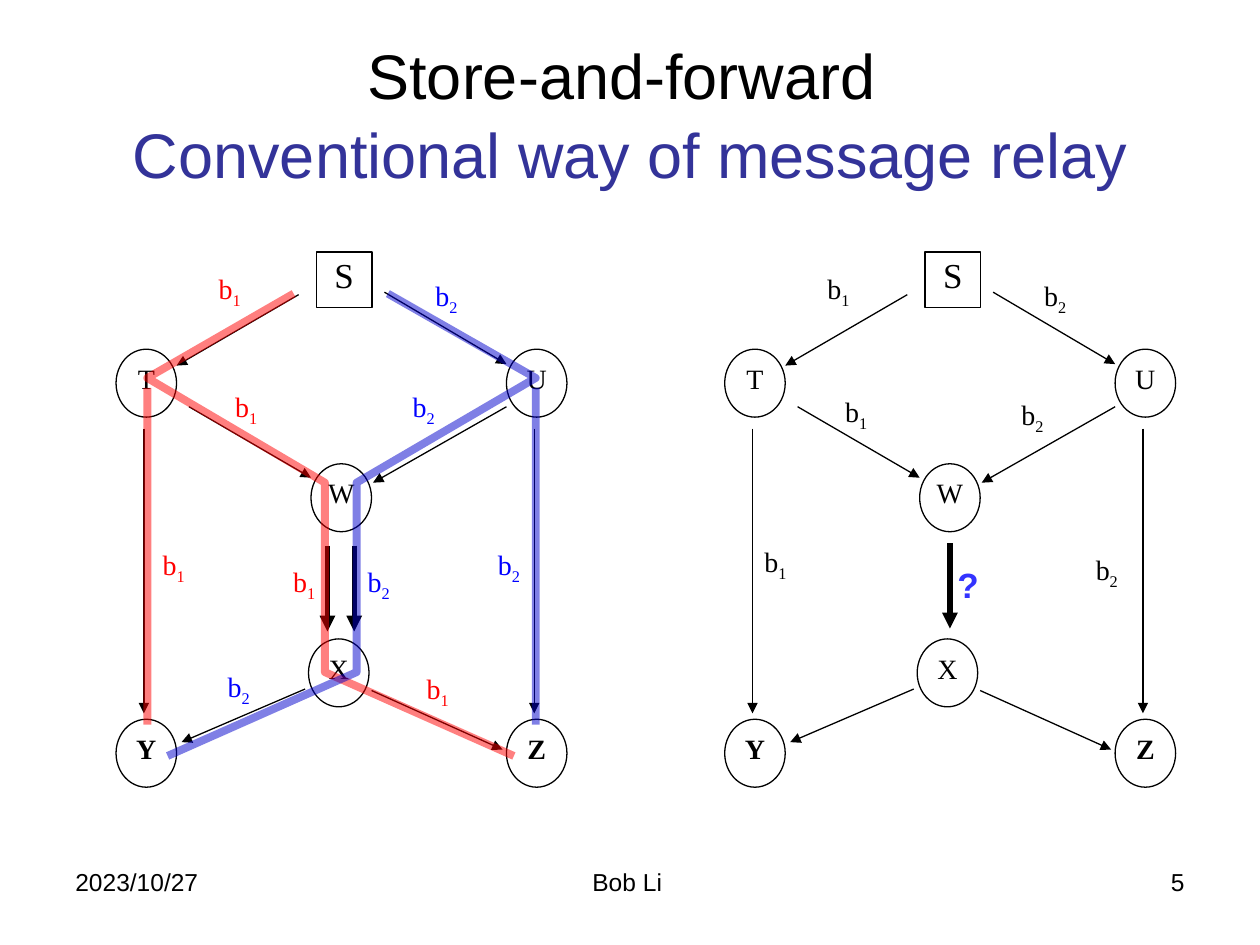
from lxml.etree import SubElement
from pptx import Presentation
from pptx.dml.color import RGBColor
from pptx.enum.shapes import MSO_CONNECTOR, MSO_SHAPE
from pptx.enum.text import MSO_ANCHOR as Anchor, PP_ALIGN as Align
from pptx.oxml.ns import qn
from pptx.util import Cm, Pt

COLORS = {
    "black": "000000", "navy": "333399", "red": "FF0000", "blue": "0000FF",
    "route_blue": "0000CC", "question": "3333FF",
}
SERIF = "Times New Roman"
DIAGRAM_LEFTS = [0, 12.27]

presentation = Presentation()
presentation.slide_width = Cm(25.4)
presentation.slide_height = Cm(19.05)
slide = presentation.slides.add_slide(presentation.slide_layouts[6])


def write(shape, text, size, color="black", font="Arial", align=Align.LEFT,
          anchor=Anchor.TOP, insets=(0.03, 0.03, 0.03, 0.03), bold=False):
    frame = shape.text_frame
    frame.word_wrap = True
    frame.vertical_anchor = anchor
    (frame.margin_left, frame.margin_top,
     frame.margin_right, frame.margin_bottom) = [Cm(inset) for inset in insets]
    paragraph = frame.paragraphs[0]
    paragraph.text = text
    paragraph.alignment = align
    paragraph.font.name = font
    paragraph.font.size = Pt(size)
    paragraph.font.bold = bold
    paragraph.font.color.rgb = RGBColor.from_string(COLORS[color])
    return paragraph


def add_line(start, end, width=0.75, color="black", arrow=True):
    line = slide.shapes.add_connector(
        MSO_CONNECTOR.STRAIGHT, *[Cm(value) for value in (*start, *end)])
    line.line.width = Pt(width)
    line.line.color.rgb = RGBColor.from_string(COLORS[color])
    properties = line._element.spPr
    if arrow:
        SubElement(properties.find(qn("a:ln")), qn("a:tailEnd"), type="triangle")
    SubElement(properties, qn("a:effectLst"))
    return line


title = slide.shapes.add_textbox(Cm(0.64), Cm(0.84), Cm(24.13), Cm(2.84))
paragraph = write(title, "Store-and-forward \vConventional way of message relay", 36,
                  align=Align.CENTER, anchor=Anchor.MIDDLE,
                  insets=(0.25, 0.13, 0.25, 0.13))
paragraph.line_spacing = 1.05
paragraph.runs[1].font.color.rgb = RGBColor.from_string(COLORS["navy"])

footers = [
    ("2023/10/27", 1.27, 5.92, Align.LEFT),
    ("Bob Li", 8.62, 8.05, Align.CENTER),
    ("5", 18.21, 5.92, Align.RIGHT),
]
for text, left, width, align in footers:
    footer = slide.shapes.add_textbox(Cm(left), Cm(17.35), Cm(width), Cm(1.32))
    write(footer, text, 14, align=align, insets=(0.25, 0.13, 0.25, 0.13))

nodes = [
    ("T", 2.34, 7.04), ("U", 10.21, 7.04), ("W", 6.27, 9.35),
    ("X", 6.22, 12.88), ("Y", 2.34, 14.5), ("Z", 10.21, 14.5),
]
edges = [
    ((6.02, 5.94), (3.56, 7.37)), ((7.75, 5.89), (10.21, 7.34)),
    ((2.9, 8.64), (2.9, 14.38)), ((10.77, 8.64), (10.77, 14.38)),
    ((3.81, 8.2), (6.27, 9.63)), ((10.21, 8.2), (7.52, 9.73)),
    ((6.15, 13.89), (3.66, 14.96)), ((7.49, 13.92), (10.13, 15.11)),
]
for offset in DIAGRAM_LEFTS:
    source = slide.shapes.add_shape(
        MSO_SHAPE.RECTANGLE, Cm(6.38 + offset), Cm(5.08), Cm(1.12), Cm(1.12))
    write(source, "S", 20, font=SERIF, align=Align.CENTER)
    outlines = [source]
    for name, left, top in nodes:
        node = slide.shapes.add_shape(
            MSO_SHAPE.OVAL, Cm(left + offset), Cm(top), Cm(1.22), Cm(1.37))
        write(node, name, 16, font=SERIF, align=Align.CENTER, anchor=Anchor.MIDDLE,
              insets=(0, 0, 0, 0.2), bold=name in "YZ")
        outlines.append(node)
    for shape in outlines:
        shape.shadow.inherit = False
        shape.fill.background()
        shape.line.width = Pt(0.75)
        shape.line.color.rgb = RGBColor.from_string(COLORS["black"])
    for (x1, y1), (x2, y2) in edges:
        add_line((x1 + offset, y1), (x2 + offset, y2))

for x, top, bottom in [(6.6, 11, 12.73), (7.14, 11, 12.73), (19.15, 10.95, 12.67)]:
    add_line((x, top), (x, bottom), width=3)

labels = [
    ("1", "red", [(4.38, 5.44), (4.71, 7.82), (3.25, 11), (5.88, 11.35), (8.57, 13.51)]),
    ("2", "blue", [(8.75, 5.59), (8.29, 7.82), (10.01, 11), (7.38, 11.35), (4.56, 13.46)]),
    ("1", "black", [(16.65, 5.44), (17.01, 7.92), (15.38, 10.95)]),
    ("2", "black", [(21.02, 5.59), (20.56, 7.98), (22.06, 11.1)]),
]
for subscript, color, places in labels:
    for left, top in places:
        label = slide.shapes.add_textbox(Cm(left), Cm(top), Cm(0.9), Cm(0.86))
        paragraph = write(label, "b", 16, color, SERIF)
        run = paragraph.add_run()
        run.text = subscript
        run.font._element.set("baseline", "-25000")

question = slide.shapes.add_textbox(Cm(19.3), Cm(11.37), Cm(0.9), Cm(0.9))
write(question, "?", 20, "question", insets=(0, 0, 0, 0), bold=True)

routes = [
    ("red", 2.97, [(5.92, 5.92), (2.97, 7.62), (6.55, 9.73), (6.55, 13.55), (10.36, 15.24)]),
    ("route_blue", 10.8, [(7.82, 5.92), (10.8, 7.62), (7.19, 9.73), (7.19, 13.55), (3.38, 15.24)]),
]
for color, x, points in routes:
    start, *others = [(Cm(left), Cm(top)) for left, top in points]
    builder = slide.shapes.build_freeform(*start)
    builder.add_line_segments(others, close=False)
    route = builder.convert_to_shape()
    route.shadow.inherit = False
    route.fill.background()
    route.line.width = Pt(4.5)
    route.line.color.rgb = RGBColor.from_string(COLORS[color])
    branch = add_line((x, 7.82), (x, 14.61), 4.5, color, arrow=False)
    for shape in (route, branch):
        fill_color = shape._element.spPr.find(qn("a:ln")).find(".//" + qn("a:srgbClr"))
        SubElement(fill_color, qn("a:alpha"), val="50000")

presentation.save("out.pptx")
